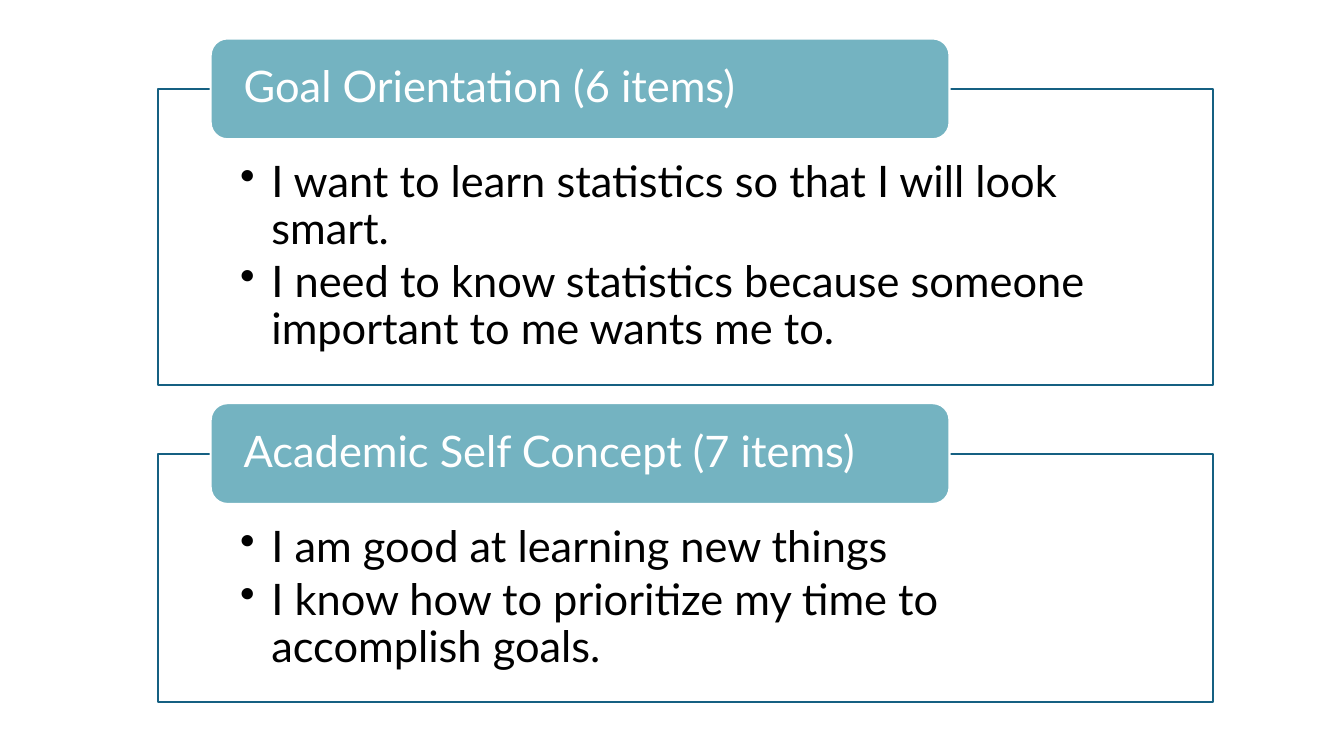
"""Build a slide of two titled boxes with sample survey items."""
from lxml import etree
from pptx import Presentation
from pptx import util as u
from pptx.dml.color import RGBColor
from pptx.enum import shapes, text
from pptx.oxml.ns import qn

Cm, Pt = u.Cm, u.Pt
HUES = {"white": "FFFFFF", "black": "000000", "teal": "74B3C1", "edge": "156082"}
LEFT, WIDE = 3.99, 26.59
TAB = 2.54
SCALES = [
    ("Goal Orientation (6 items)", 2.24, 7.47, [
        "I want to learn statistics so that I will look smart.",
        "I need to know statistics because someone important to me wants me to.",
    ]),
    ("Academic Self Concept (7 items)", 11.43, 6.25, [
        "I am good at learning new things",
        "I know how to prioritize my time to accomplish goals.",
    ]),
]


def hue(name):
    """Return the named colour."""
    return RGBColor.from_string(HUES[name])


def add_box(slide, kind, place, fill, line, insets, anchor):
    """Add a filled, outlined shape and return its text frame."""
    box = slide.shapes.add_shape(kind, *map(Cm, place))
    box.shadow.inherit = False
    box.fill.solid()
    box.fill.fore_color.rgb = hue(fill)
    box.line.color.rgb = hue(line)
    box.line.width = Pt(1.5)
    frame = box.text_frame
    frame.word_wrap = True
    frame.vertical_anchor = anchor
    (frame.margin_left, frame.margin_top,
     frame.margin_right, frame.margin_bottom) = map(Cm, insets)
    return frame


def add_bullet(para):
    """Give a paragraph a hanging round bullet."""
    props = para._p.get_or_add_pPr()
    props.set("marL", str(Cm(0.79)))
    props.set("indent", str(-Cm(0.79)))
    etree.SubElement(props, qn("a:buChar")).set("char", "•")


def write(frame, lines, color, after, bullet=False):
    """Fill a text frame with one paragraph per line."""
    for i, line in enumerate(lines):
        para = frame.add_paragraph() if i else frame.paragraphs[0]
        para.text = line
        para.alignment = text.PP_ALIGN.LEFT
        para.line_spacing = 0.9
        para.space_after = Pt(after)
        if bullet:
            add_bullet(para)
        para.font.name = "Lato"
        para.font.size = Pt(31)
        para.font.color.rgb = hue(color)


def add_scale(slide, title, top, high, items):
    """Add a box of items with a title tab across its top edge."""
    kinds, anchors = shapes.MSO_SHAPE, text.MSO_ANCHOR
    body = add_box(slide, kinds.RECTANGLE, (LEFT, top, WIDE, high),
                   "white", "edge", (2.06, 1.8, 2.06, 0.61), anchors.TOP)
    write(body, items, "black", 4.5, bullet=True)
    head = add_box(slide, kinds.ROUNDED_RECTANGLE,
                   (LEFT + 1.32, top - TAB / 2, 18.62, TAB),
                   "teal", "white", (0.71, 0, 0.71, 0), anchors.MIDDLE)
    write(head, [title], "white", 0)


def main():
    """Build and save the slide."""
    deck = Presentation()
    deck.slide_width, deck.slide_height = Cm(33.87), Cm(19.05)
    slide = deck.slides.add_slide(deck.slide_layouts[6])
    for scale in SCALES:
        add_scale(slide, *scale)
    deck.save("out.pptx")


if __name__ == "__main__":
    main()
